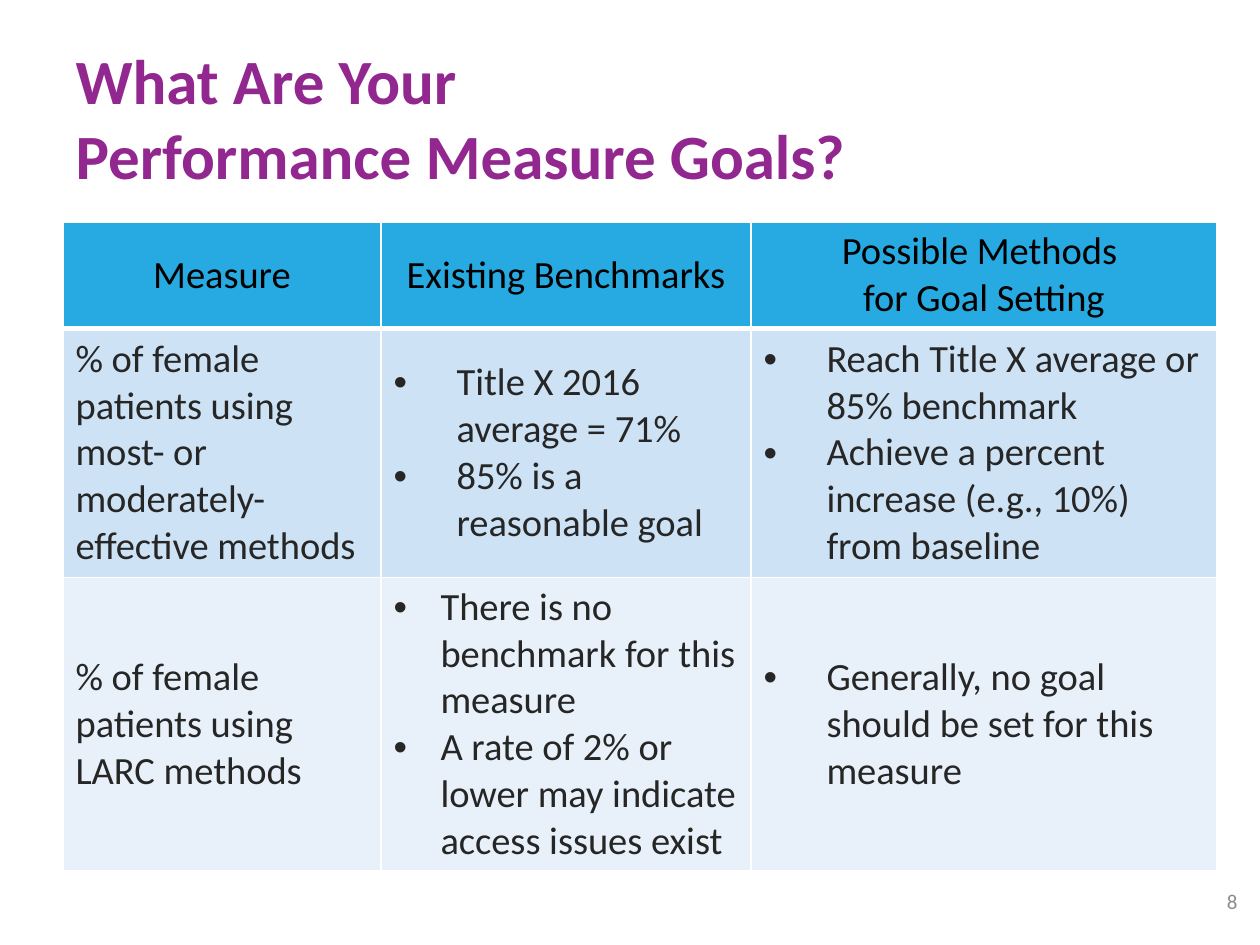
"""Build the slide on performance measure goals."""
from dataclasses import dataclass

from lxml import etree
from pptx import Presentation
from pptx.dml.color import RGBColor
from pptx.enum.text import MSO_ANCHOR, MSO_AUTO_SIZE, PP_ALIGN
from pptx.oxml.ns import qn
from pptx.slide import Slide
from pptx.table import _Cell
from pptx.text.text import TextFrame, _Paragraph
from pptx.util import Emu, Pt

MIDDLE = MSO_ANCHOR.MIDDLE
FIXED = MSO_AUTO_SIZE.NONE
LEFT, CENTER, RIGHT = PP_ALIGN.LEFT, PP_ALIGN.CENTER, PP_ALIGN.RIGHT
PURPLE = RGBColor(0x92, 0x27, 0x8F)
BLUE = RGBColor(0x27, 0xAA, 0xE1)
LIGHT = RGBColor(0xCD, 0xE2, 0xF4)
PALE = RGBColor(0xE8, 0xF1, 0xF9)
WHITE = RGBColor(0xFF, 0xFF, 0xFF)
BLACK = RGBColor(0, 0, 0)
DARK = RGBColor(0x26, 0x26, 0x26)
GRAY = RGBColor(0x8C, 0x8C, 0x8C)
FONT = "Calibri"
WIDTHS = (318, 370, 466)


@dataclass
class Entry:
    """Text of one cell; an indent in px makes it a bulleted list."""
    lines: tuple[str, ...]
    indent: int = 0


@dataclass
class Band:
    """One table row with its look."""
    height: int
    fill: RGBColor
    color: RGBColor
    align: PP_ALIGN
    edge: int
    cells: tuple[Entry, ...]


BANDS = (
    Band(106, BLUE, BLACK, CENTER, 3, (
        Entry(("Measure",)),
        Entry(("Existing Benchmarks",)),
        Entry(("Possible Methods \vfor Goal Setting",)),
    )),
    Band(249, LIGHT, DARK, LEFT, 1, (
        Entry(("% of female patients using most- or moderately- effective methods",)),
        Entry(("Title X 2016 average = 71%", "85% is a reasonable goal"), 63),
        Entry(("Reach Title X average or 85% benchmark",
               "Achieve a percent increase (e.g., 10%) from baseline"), 63),
    )),
    Band(292, PALE, DARK, LEFT, 1, (
        Entry(("% of female patients using LARC methods",)),
        Entry(("There is no benchmark for this measure",
               "A rate of 2% or lower may indicate access issues exist"), 47),
        Entry(("Generally, no goal should be set for this measure",), 63),
    )),
)


def px(count: int) -> Emu:
    """Turn px into EMU at 126 px to the inch."""
    return Emu(round(count * 914400 / 126))


def add_bullet(para: _Paragraph, indent: int) -> None:
    """Give a paragraph a bullet with a hanging indent."""
    props = para._p.get_or_add_pPr()
    props.set("marL", str(px(indent)))
    props.set("indent", str(-px(indent)))
    etree.SubElement(props, qn("a:buFont"), typeface="Arial")
    etree.SubElement(props, qn("a:buChar"), char="•")


def write(frame: TextFrame, entry: Entry, size: int, color: RGBColor,
          align: PP_ALIGN, bold: bool = False) -> None:
    """Fill a text frame with evenly styled paragraphs."""
    frame.word_wrap = True
    frame.text = "\n".join(entry.lines)
    for para in frame.paragraphs:
        if entry.indent:
            add_bullet(para, entry.indent)
        para.alignment = align
        font = para.font
        font.name, font.size, font.bold = FONT, Pt(size), bold
        font.color.rgb = color


def set_edges(cell: _Cell, top: int, base: int) -> None:
    """Draw white borders, with the given top and base widths in points."""
    props = cell._tc.get_or_add_tcPr()
    sides = (("L", 1), ("R", 1), ("T", top), ("B", base))
    for place, (side, width) in enumerate(sides):
        line = etree.Element(qn(f"a:ln{side}"), w=str(Pt(width)))
        fill = etree.SubElement(line, qn("a:solidFill"))
        etree.SubElement(fill, qn("a:srgbClr"), val=str(WHITE))
        props.insert(place, line)


def add_title(slide: Slide) -> None:
    """Place and fill the title."""
    title = slide.shapes.title
    title.left, title.top = px(63), px(38)
    title.width, title.height = px(850), px(158)
    frame = title.text_frame
    frame.auto_size, frame.vertical_anchor = FIXED, MIDDLE
    write(frame, Entry(("What Are Your \vPerformance Measure Goals?",)),
          36, PURPLE, LEFT, True)


def add_goals(slide: Slide) -> None:
    """Add the table of measures, benchmarks and methods."""
    high = sum(band.height for band in BANDS)
    table = slide.shapes.add_table(len(BANDS), len(WIDTHS), px(63), px(222),
                                   px(sum(WIDTHS)), px(high)).table
    for col, width in zip(table.columns, WIDTHS):
        col.width = px(width)
    top = 1
    for row, band in zip(table.rows, BANDS):
        row.height = px(band.height)
        for cell, entry in zip(row.cells, band.cells):
            cell.vertical_anchor = MIDDLE
            cell.fill.solid()
            cell.fill.fore_color.rgb = band.fill
            set_edges(cell, top, band.edge)
            write(cell.text_frame, entry, 22, band.color, band.align)
        top = band.edge


def add_number(slide: Slide) -> None:
    """Add the page number."""
    box = slide.shapes.add_textbox(px(1187), px(876), px(63), px(50))
    box.text_frame.vertical_anchor = MIDDLE
    write(box.text_frame, Entry(("8",)), 12, GRAY, RIGHT)


def main() -> None:
    """Build and save the deck."""
    deck = Presentation()
    deck.slide_width, deck.slide_height = px(1260), px(945)
    slide = deck.slides.add_slide(deck.slide_layouts[5])
    add_title(slide)
    add_goals(slide)
    add_number(slide)
    deck.save("out.pptx")


if __name__ == "__main__":
    main()
